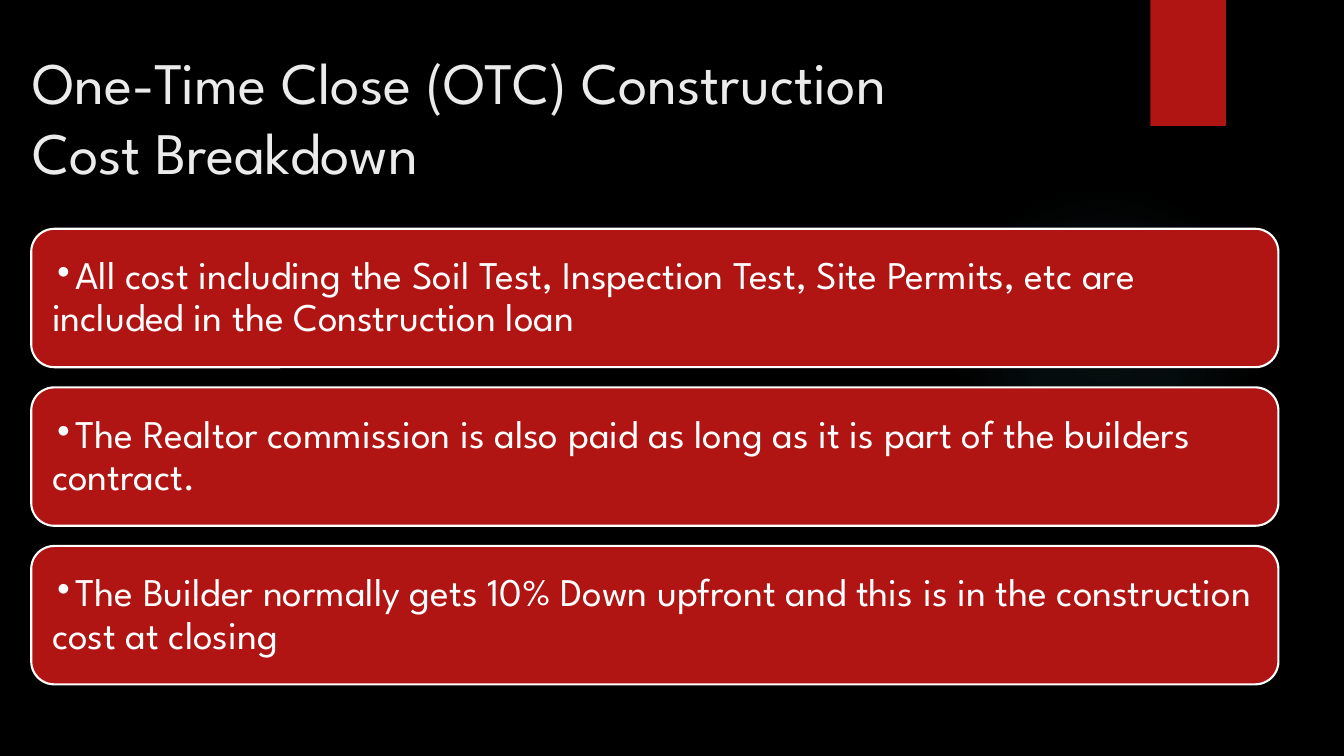
from lxml import etree
from pptx import Presentation
from pptx.dml.color import RGBColor
from pptx.enum.shapes import MSO_SHAPE
from pptx.enum.text import MSO_ANCHOR, PP_ALIGN
from pptx.oxml import parse_xml
from pptx.oxml.ns import qn
from pptx.util import Inches, Pt

OVAL, RECTANGLE, ROUNDED = MSO_SHAPE.OVAL, MSO_SHAPE.RECTANGLE, MSO_SHAPE.ROUNDED_RECTANGLE
LEFT, TOP, MIDDLE = PP_ALIGN.LEFT, MSO_ANCHOR.TOP, MSO_ANCHOR.MIDDLE
FONT = "League Spartan"
COLORS = {"background": "000000", "red": "B01513", "glow": "50B9C1",
          "title": "EBEBEB", "white": "FFFFFF"}
GLOW_STOPS = [(0, 7), (36, 6), (69, 0)]
TITLE = "One-Time Close (OTC) Construction\vCost Breakdown"
COSTS = [
    "All cost including the Soil Test, Inspection Test, Site Permits, etc are "
    "included in the Construction loan",
    "The Realtor commission is also paid as long as it is part of the builders contract.",
    "The Builder normally gets 10% Down upfront and this is in the construction "
    "cost at closing",
]


def color(name):
    """Return the named palette colour."""
    return RGBColor.from_string(COLORS[name])


def add_panel(slide, kind, box, fill=None):
    """Add a shadowless, unlined shape in a box given in inches."""
    panel = slide.shapes.add_shape(kind, *map(Inches, box))
    panel.shadow.inherit = False
    panel.line.fill.background()
    if fill:
        panel.fill.solid()
        panel.fill.fore_color.rgb = color(fill)
    return panel


def set_text(frame, text, size, ink, inset, anchor):
    """Put one left-aligned paragraph in a text frame and return it."""
    frame.word_wrap = True
    frame.vertical_anchor = anchor
    frame.margin_left = frame.margin_right = Inches(inset)
    frame.margin_top = frame.margin_bottom = Inches(inset)
    paragraph = frame.paragraphs[0]
    paragraph.text = text
    paragraph.alignment = LEFT
    paragraph.font.name = FONT
    paragraph.font.size = Pt(size)
    paragraph.font.color.rgb = color(ink)
    return paragraph


def draw_glow(slide, box):
    """Draw the faint round glow behind the content."""
    glow = add_panel(slide, OVAL, box, "glow")
    stops = "".join(
        f'<a:gs pos="{position * 1000}"><a:srgbClr val="{COLORS["glow"]}">'
        f'<a:alpha val="{opacity * 1000}"/></a:srgbClr></a:gs>'
        for position, opacity in GLOW_STOPS)
    gradient = parse_xml(
        '<a:gradFill xmlns:a="http://schemas.openxmlformats.org/drawingml/2006/main">'
        f'<a:gsLst>{stops}</a:gsLst><a:path path="circle">'
        '<a:fillToRect l="50000" t="50000" r="50000" b="50000"/></a:path></a:gradFill>')
    properties = glow.element.spPr
    properties.replace(properties.find(qn("a:solidFill")), gradient)


def draw_title(slide, box):
    """Write the two-line title."""
    title = slide.shapes.add_textbox(*map(Inches, box))
    paragraph = set_text(title.text_frame, TITLE, 42, "title", 0, TOP)
    for run in paragraph.runs:
        run.font.size = Pt(42)


def draw_cost_cards(slide, box, gap):
    """Stack one bulleted card per cost in the box."""
    left, top, width, height = box
    card_height = (height - gap * (len(COSTS) - 1)) / len(COSTS)
    for index, cost in enumerate(COSTS):
        card_top = top + index * (card_height + gap)
        card = add_panel(slide, ROUNDED, (left, card_top, width, card_height), "red")
        card.line.color.rgb = color("white")
        card.line.width = Pt(1.5)
        paragraph = card.text_frame.paragraphs[0]
        properties = paragraph._p.get_or_add_pPr()
        properties.set("marL", "0")
        properties.set("indent", "0")
        etree.SubElement(properties, qn("a:buSzPct"), val="118000")
        etree.SubElement(properties, qn("a:buFont"), typeface=FONT)
        etree.SubElement(properties, qn("a:buChar"), char="•")
        set_text(card.text_frame, cost, 28, "white", 0.14, MIDDLE)
        paragraph.line_spacing = 0.9


def main():
    """Build and save the slide."""
    presentation = Presentation()
    presentation.slide_width, presentation.slide_height = Inches(13.33), Inches(7.5)
    slide = presentation.slides.add_slide(presentation.slide_layouts[6])
    slide.background.fill.solid()
    slide.background.fill.fore_color.rgb = color("background")
    draw_glow(slide, (9.41, 1.83, 3.08, 3.08))
    add_panel(slide, RECTANGLE, (11.41, 0, 0.75, 1.25), "red")
    draw_title(slide, (0.32, 0.45, 12.18, 1.41))
    draw_cost_cards(slide, (0.31, 2.27, 12.37, 4.52), 0.2)
    presentation.save("out.pptx")


if __name__ == "__main__":
    main()
